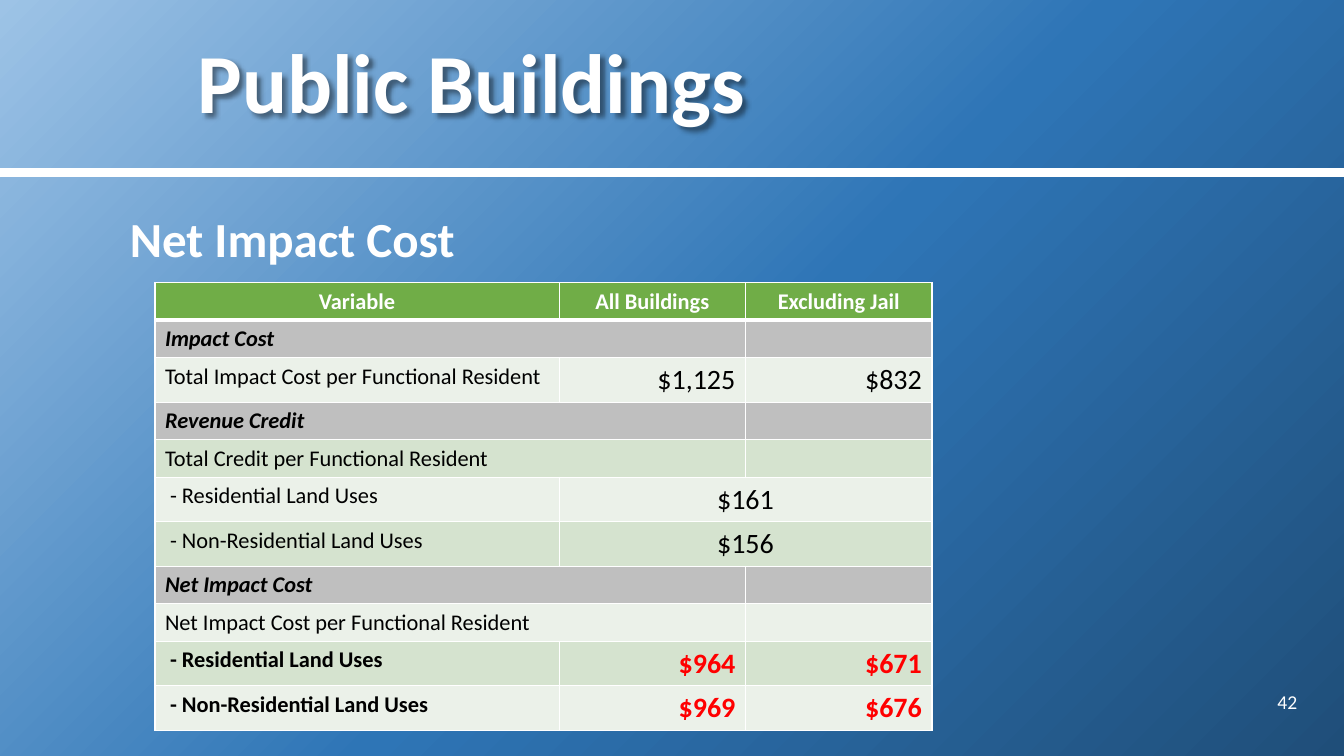
from dataclasses import dataclass
from typing import Optional

import lxml.etree
import pptx
import pptx.dml.color
import pptx.enum.shapes
import pptx.enum.text
import pptx.oxml
import pptx.oxml.ns
import pptx.util

Pt = pptx.util.Pt
RGBColor = pptx.dml.color.RGBColor
Align = pptx.enum.text.PP_ALIGN
Anchor = pptx.enum.text.MSO_ANCHOR
qn = pptx.oxml.ns.qn

FONT = "Calibri"
WHITE = RGBColor(0xFF, 0xFF, 0xFF)
BLACK = RGBColor(0x00, 0x00, 0x00)
RED = RGBColor(0xFF, 0x00, 0x00)
GREEN = RGBColor(0x70, 0xAD, 0x47)
GREY = RGBColor(0xBF, 0xBF, 0xBF)
PALE = RGBColor(0xEB, 0xF1, 0xE9)
SAGE = RGBColor(0xD5, 0xE3, 0xCF)
BACKDROP = (
    (0, RGBColor(0x9D, 0xC3, 0xE6)),
    (53, RGBColor(0x2E, 0x75, 0xB6)),
    (100, RGBColor(0x1F, 0x4E, 0x79)),
)
COLUMN_WIDTHS = (288.7, 133.2, 133.2)
LABEL_SIZE, AMOUNT_SIZE = 16, 20
LABEL_ROW_HEIGHT, AMOUNT_ROW_HEIGHT = 26.8, 31.8


@dataclass(frozen=True)
class TextStyle:
    size: float
    color: RGBColor = WHITE
    bold: bool = False
    italic: bool = False
    align: Align = Align.LEFT
    line_spacing: Optional[float] = None


@dataclass(frozen=True)
class Caption:
    text: str
    left: float
    top: float
    width: float
    height: float
    style: TextStyle
    anchor: Anchor = Anchor.MIDDLE
    shadow: bool = False


@dataclass(frozen=True)
class CostRow:
    """One amount is shared by both building columns."""
    label: str
    fill: RGBColor
    amounts: tuple[str, ...] = ()
    bold: bool = False
    italic: bool = False


CAPTIONS = (
    Caption("Public Buildings", 133.9, 0, 799.2, 123.1,
            TextStyle(60, bold=True, line_spacing=0.9), shadow=True),
    Caption("42", 869.8, 486.7, 64, 28.8, TextStyle(14, align=Align.RIGHT)),
    Caption("Net Impact Cost", 85.7, 136.8, 731.5, 60.5,
            TextStyle(35, bold=True, line_spacing=1.2), Anchor.TOP),
)
HEADINGS = ("Variable", "All Buildings", "Excluding Jail")
COST_ROWS = (
    CostRow("Impact Cost", GREY, bold=True, italic=True),
    CostRow("Total Impact Cost per Functional Resident", PALE, ("$1,125", "$832")),
    CostRow("Revenue Credit", GREY, bold=True, italic=True),
    CostRow("Total Credit per Functional Resident", SAGE),
    CostRow(" - Residential Land Uses", PALE, ("$161",)),
    CostRow(" - Non-Residential Land Uses", SAGE, ("$156",)),
    CostRow("Net Impact Cost", GREY, bold=True, italic=True),
    CostRow("Net Impact Cost per Functional Resident", PALE),
    CostRow(" - Residential Land Uses", SAGE, ("$964", "$671"), bold=True),
    CostRow(" - Non-Residential Land Uses", PALE, ("$969", "$676"), bold=True),
)


def write(paragraph, text: str, style: TextStyle) -> None:
    paragraph.text = text
    paragraph.alignment = style.align
    if style.line_spacing:
        paragraph.line_spacing = style.line_spacing
    font = paragraph.font
    font.name, font.size = FONT, Pt(style.size)
    font.bold, font.italic = style.bold, style.italic
    font.color.rgb = style.color


def paint_backdrop(slide) -> None:
    slide.background.fill.gradient()
    gradient = slide.element.find(".//" + qn("a:gradFill"))
    for child in list(gradient):
        gradient.remove(child)
    stops = lxml.etree.SubElement(gradient, qn("a:gsLst"))
    for percent, color in BACKDROP:
        stop = lxml.etree.SubElement(stops, qn("a:gs"), pos=str(percent * 1000))
        lxml.etree.SubElement(stop, qn("a:srgbClr"), val=str(color))
    path = lxml.etree.SubElement(gradient, qn("a:path"), path="circle")
    lxml.etree.SubElement(path, qn("a:fillToRect"), r="100000", b="100000")


def add_divider(slide) -> None:
    divider = slide.shapes.add_connector(
        pptx.enum.shapes.MSO_CONNECTOR.STRAIGHT, Pt(-1.4), Pt(123.1), Pt(960), Pt(123.1))
    divider.line.color.rgb = WHITE
    divider.line.width = Pt(6)
    lxml.etree.SubElement(divider.element.spPr, qn("a:effectLst"))


def add_caption(slide, caption: Caption) -> None:
    box = slide.shapes.add_textbox(
        Pt(caption.left), Pt(caption.top), Pt(caption.width), Pt(caption.height))
    frame = box.text_frame
    frame.word_wrap = True
    frame.vertical_anchor = caption.anchor
    write(frame.paragraphs[0], caption.text, caption.style)
    if caption.shadow:
        effects = lxml.etree.SubElement(box.element.spPr, qn("a:effectLst"))
        shadow = lxml.etree.SubElement(
            effects, qn("a:outerShdw"), blurRad=str(Pt(3)), dist=str(Pt(3)),
            dir="2700000", algn="tl")
        black = lxml.etree.SubElement(shadow, qn("a:srgbClr"), val=str(BLACK))
        lxml.etree.SubElement(black, qn("a:alpha"), val="43000")


def style_cell(cell, fill: RGBColor, top: float, bottom: float) -> None:
    """Set the white borders, the fill and the height of an empty line."""
    properties = cell._tc.get_or_add_tcPr()
    for side, width in (("L", 1), ("R", 1), ("T", top), ("B", bottom)):
        border = lxml.etree.SubElement(properties, qn(f"a:ln{side}"), w=str(Pt(width)))
        solid = lxml.etree.SubElement(border, qn("a:solidFill"))
        lxml.etree.SubElement(solid, qn("a:srgbClr"), val=str(WHITE))
    cell.fill.solid()
    cell.fill.fore_color.rgb = fill
    line_end = lxml.etree.SubElement(cell.text_frame.paragraphs[0]._p, qn("a:endParaRPr"))
    line_end.set("sz", str(LABEL_SIZE * 100))


def fill_row(table, index: int, row: CostRow) -> None:
    cells = [table.cell(index, column) for column in range(len(COLUMN_WIDTHS))]
    table.rows[index].height = Pt(AMOUNT_ROW_HEIGHT if row.amounts else LABEL_ROW_HEIGHT)
    for cell in cells:
        style_cell(cell, row.fill, 3 if index == 1 else 1, 1)
    write(cells[0].text_frame.paragraphs[0], row.label,
          TextStyle(LABEL_SIZE, BLACK, row.bold, row.italic))
    shared = len(row.amounts) == 1
    amount_style = TextStyle(AMOUNT_SIZE, RED if row.bold else BLACK, row.bold,
                             align=Align.CENTER if shared else Align.RIGHT)
    for cell, amount in zip(cells[1:], row.amounts):
        write(cell.text_frame.paragraphs[0], amount, amount_style)
    if shared:
        cells[1].merge(cells[2])
    elif not row.amounts:
        cells[0].merge(cells[1])


def add_cost_table(slide) -> None:
    height = LABEL_ROW_HEIGHT * (len(COST_ROWS) + 1)
    table = slide.shapes.add_table(
        len(COST_ROWS) + 1, len(HEADINGS), Pt(110.7), Pt(202),
        Pt(sum(COLUMN_WIDTHS)), Pt(height)).table
    table.first_row = table.horz_banding = False
    for column, width in zip(table.columns, COLUMN_WIDTHS):
        column.width = Pt(width)
    table.rows[0].height = Pt(LABEL_ROW_HEIGHT)
    for cell, heading in zip(table.rows[0].cells, HEADINGS):
        style_cell(cell, GREEN, 1, 3)
        cell.vertical_anchor = Anchor.MIDDLE
        write(cell.text_frame.paragraphs[0], heading,
              TextStyle(LABEL_SIZE, bold=True, align=Align.CENTER))
    for index, row in enumerate(COST_ROWS, start=1):
        fill_row(table, index, row)


def main() -> None:
    deck = pptx.Presentation()
    deck.slide_width, deck.slide_height = Pt(960), Pt(540)
    slide = deck.slides.add_slide(deck.slide_layouts[6])
    paint_backdrop(slide)
    add_divider(slide)
    for caption in CAPTIONS:
        add_caption(slide, caption)
    add_cost_table(slide)
    deck.save("out.pptx")


if __name__ == "__main__":
    main()
